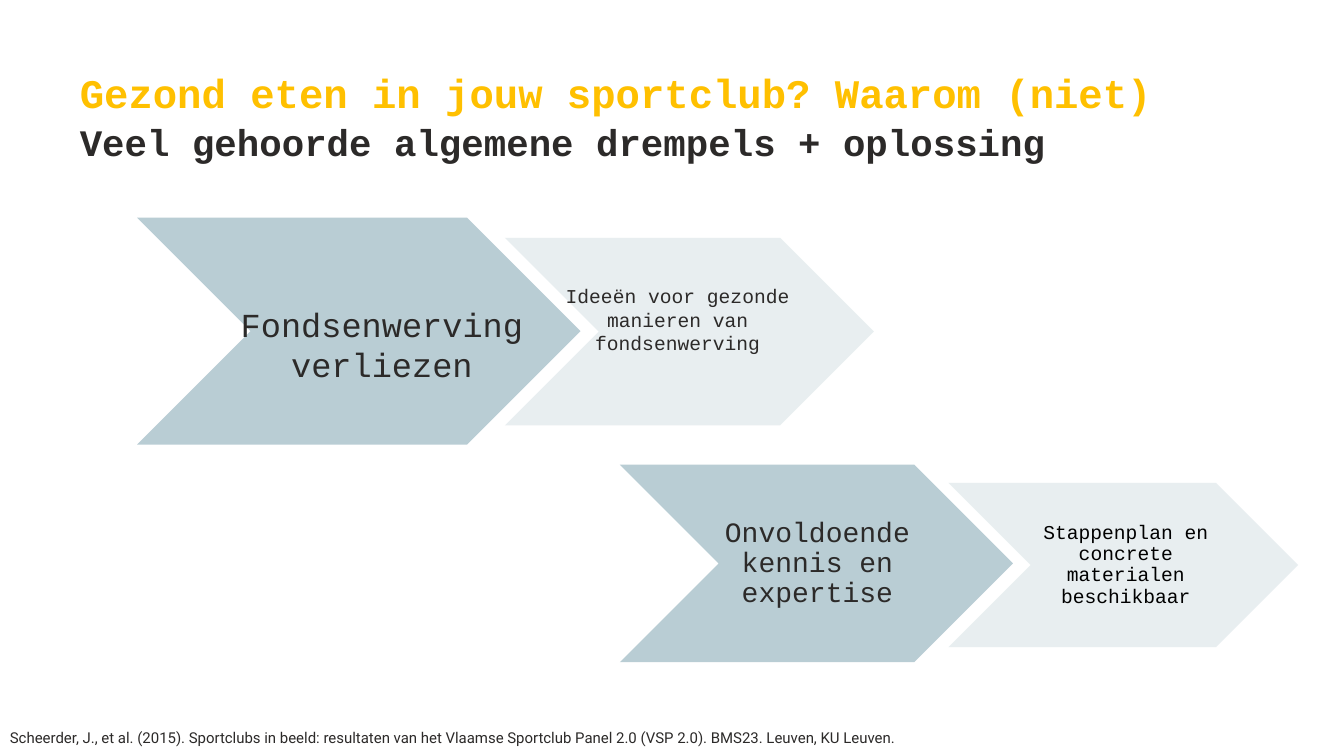
from lxml import etree
from pptx import Presentation
from pptx.dml.color import RGBColor
from pptx.enum.shapes import MSO_SHAPE
from pptx.enum.text import MSO_ANCHOR, MSO_AUTO_SIZE, PP_ALIGN
from pptx.oxml.ns import qn
from pptx.util import Pt

CHEVRON = MSO_SHAPE.CHEVRON
TOP, MIDDLE = MSO_ANCHOR.TOP, MSO_ANCHOR.MIDDLE
NO_FIT = MSO_AUTO_SIZE.NONE
LEFT, CENTER = PP_ALIGN.LEFT, PP_ALIGN.CENTER
TITLE_ONLY = 5
COLORS = {"barrier": "B9CDD4", "solution": "E6EDEF", "ink": "2C2A29",
          "gold": "FFC000", "black": "000000"}
MONO, SANS = "Courier New", "Roboto"


class BarrierSlide:
    """Holds the current slide and the style of its elements."""

    def __init__(self, deck):
        self.slide = deck.slides.add_slide(deck.slide_layouts[TITLE_ONLY])

    def set_text(self, shape, text, size, color="ink", font=MONO, bold=False,
                 align=LEFT, anchor=TOP, insets=(0, 0, 0, 0), spacing=1.0):
        frame = shape.text_frame
        frame.word_wrap = True
        frame.auto_size = NO_FIT
        frame.vertical_anchor = anchor
        (frame.margin_left, frame.margin_top,
         frame.margin_right, frame.margin_bottom) = map(Pt, insets)
        frame.text = text
        paragraph = frame.paragraphs[0]
        paragraph.alignment = align
        paragraph.line_spacing = spacing
        for run in paragraph.runs:
            run.font.name = font
            run.font.size = Pt(size)
            run.font.bold = bold
            run.font.color.rgb = RGBColor.from_string(COLORS[color])

    def title(self, box, text, size, color):
        heading = self.slide.shapes.title
        heading.left, heading.top, heading.width, heading.height = map(Pt, box)
        self.set_text(heading, text, size, color, bold=True)

    def text(self, box, text, size, **style):
        self.set_text(self.slide.shapes.add_textbox(*map(Pt, box)), text, size, **style)

    def chevron(self, box, fill, opacity):
        arrow = self.slide.shapes.add_shape(CHEVRON, *map(Pt, box))
        arrow.shadow.inherit = False
        arrow.fill.solid()
        arrow.fill.fore_color.rgb = RGBColor.from_string(COLORS[fill])
        arrow.line.fill.background()
        if opacity < 100:
            color = arrow._element.spPr.find(qn("a:solidFill")).find(qn("a:srgbClr"))
            etree.SubElement(color, qn("a:alpha")).set("val", str(opacity * 1000))

    def step(self, box, label_box, label, size, fill, opacity, color, spacing):
        self.chevron(box, fill, opacity)
        self.text(label_box, label, size, color=color, align=CENTER, anchor=MIDDLE,
                  insets=(2, 1, 0, 1), spacing=spacing)


def main():
    deck = Presentation()
    deck.slide_width, deck.slide_height = Pt(960), Pt(540)
    page = BarrierSlide(deck)
    page.title((57, 48.2, 865.4, 28), "Gezond eten in jouw sportclub? Waarom (niet)", 29, "gold")
    page.text((57, 85, 865.4, 28), "Veel gehoorde algemene drempels + oplossing", 26.7, bold=True)

    steps = [
        ((97.9, 155.5, 316.8, 162), (150.5, 164.9, 242.6, 162),
         "Fondsenwerving verliezen", 24, "barrier", 100, "ink", 1.0),
        ((360.7, 169.9, 263.5, 133.9), (388.1, 161.3, 190.1, 133.9),
         "Ideeën voor gezonde manieren van fondsenwerving", 14, "solution", 90, "ink", 1.0),
        ((442.8, 331.9, 280.8, 141.1), (513.4, 331.9, 139, 141.1),
         "Onvoldoende kennis en expertise", 20, "barrier", 100, "ink", 0.9),
        ((677.5, 344.9, 249.8, 117.4), (736.6, 344.9, 133.2, 117.4),
         "Stappenplan en concrete materialen beschikbaar", 14, "solution", 90, "black", 0.9),
    ]
    for step in steps:
        page.step(*step)

    page.text((0, 517, 753.8, 20.2),
              "Scheerder, J., et al. (2015). Sportclubs in beeld: resultaten van het Vlaamse "
              "Sportclub Panel 2.0 (VSP 2.0). BMS23. Leuven, KU Leuven.",
              10.7, font=SANS, insets=(7.2, 3.6, 7.2, 3.6))
    deck.save("out.pptx")


if __name__ == "__main__":
    main()
